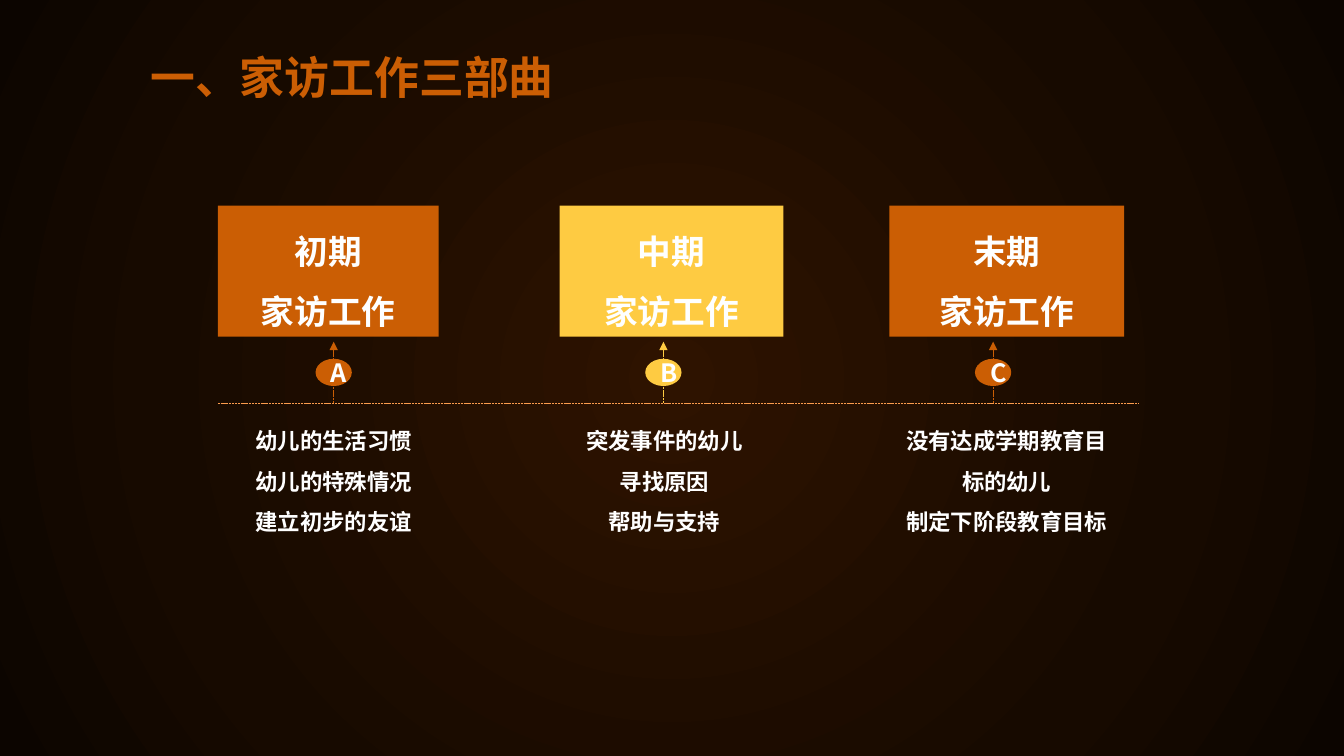
from dataclasses import dataclass

from lxml import etree
from pptx import Presentation
from pptx.dml.color import RGBColor
from pptx.enum.dml import MSO_LINE
from pptx.enum.shapes import MSO_CONNECTOR, MSO_SHAPE
from pptx.enum.text import MSO_ANCHOR, MSO_AUTO_SIZE, PP_ALIGN
from pptx.oxml import parse_xml
from pptx.oxml.ns import nsdecls, qn
from pptx.util import Inches, Pt

RECT = MSO_SHAPE.RECTANGLE
OVAL = MSO_SHAPE.OVAL
LINE = MSO_CONNECTOR.STRAIGHT
DASH = MSO_LINE.SQUARE_DOT
LEFT = PP_ALIGN.LEFT
CENTER = PP_ALIGN.CENTER
TOP = MSO_ANCHOR.TOP
MIDDLE = MSO_ANCHOR.MIDDLE
FIXED = MSO_AUTO_SIZE.NONE

TITLE = "一、家访工作三部曲"
STAGES = [
    {
        "mark": "A",
        "head": ["初期", "家访工作"],
        "notes": ["幼儿的生活习惯", "幼儿的特殊情况", "建立初步的友谊"],
        "box": (2.16, 2.19),
        "text": (2.35, 1.92),
    },
    {
        "mark": "B",
        "head": ["中期", "家访工作"],
        "notes": ["突发事件的幼儿", "寻找原因", "帮助与支持"],
        "box": (5.55, 2.22),
        "text": (5.63, 1.92),
    },
    {
        "mark": "C",
        "head": ["末期", "家访工作"],
        "notes": ["没有达成学期教育目标的幼儿", "制定下阶段教育目标"],
        "box": (8.82, 2.33),
        "text": (8.82, 2.33),
    },
]


@dataclass(frozen=True)
class Theme:
    font: str = "Noto Sans CJK SC"
    orange: str = "CB5E04"
    gold: str = "FECB42"
    axis: str = "FB9C4D"
    pale: str = "FEFFFF"
    white: str = "FFFFFF"
    glow: tuple = ((0, "2E1300"), (67, "170A00"), (100, "0C0500"))
    title: int = 32
    head: int = 24
    mark: int = 18
    note: int = 16


THEME = Theme()
AXIS = 4.0
TIP = 3.39
STEM = 3.31
STEP = 3.27
OVAL_W, OVAL_H = 0.36, 0.27


def paint_back(slide):
    fill = slide.background.fill
    fill.gradient()
    stops = "".join(
        f'<a:gs pos="{pos * 1000}"><a:srgbClr val="{color}"/></a:gs>'
        for pos, color in THEME.glow
    )
    glow = parse_xml(
        f'<a:gradFill {nsdecls("a")} rotWithShape="1"><a:gsLst>{stops}</a:gsLst>'
        '<a:path path="circle"><a:fillToRect l="50000" t="50000" r="50000" b="50000"/>'
        "</a:path></a:gradFill>"
    )
    old = slide.background._cSld.find(".//" + qn("a:gradFill"))
    old.getparent().replace(old, glow)


def write(shape, lines, size, color, space=1.0, align=CENTER, anchor=MIDDLE):
    frame = shape.text_frame
    frame.word_wrap = True
    frame.auto_size = FIXED
    frame.vertical_anchor = anchor
    for num, line in enumerate(lines):
        para = frame.add_paragraph() if num else frame.paragraphs[0]
        para.alignment = align
        para.line_spacing = space
        para.space_before = Pt(0)
        run = para.add_run()
        run.text = line
        font = run.font
        font.name = THEME.font
        font.size = Pt(size)
        font.bold = True
        font.color.rgb = RGBColor.from_string(color)
        face = etree.SubElement(run._r.get_or_add_rPr(), qn("a:ea"))
        face.set("typeface", THEME.font)


def add_block(slide, kind, left, top, width, height, color):
    block = slide.shapes.add_shape(
        kind, Inches(left), Inches(top), Inches(width), Inches(height)
    )
    block.shadow.inherit = False
    block.fill.solid()
    block.fill.fore_color.rgb = RGBColor.from_string(color)
    block.line.fill.background()
    return block


def add_line(slide, start, end, color, arrow=False):
    line = slide.shapes.add_connector(LINE, *map(Inches, start + end))
    line.line.color.rgb = RGBColor.from_string(color)
    line.line.width = Pt(0.5)
    line.line.dash_style = DASH
    if arrow:
        tail = etree.SubElement(line.line._get_or_add_ln(), qn("a:tailEnd"))
        tail.set("type", "triangle")
    etree.SubElement(line._element.spPr, qn("a:effectLst"))


def add_stage(slide, num, stage):
    color = THEME.gold if num % 2 else THEME.orange
    left, width = stage["box"]
    head = add_block(slide, RECT, left, 2.04, width, 1.3, color)
    write(head, stage["head"], THEME.head, THEME.pale, 1.5)

    mid = STEM + num * STEP
    add_line(slide, (mid, AXIS), (mid, TIP), color, True)
    mark = add_block(slide, OVAL, mid - OVAL_W / 2, 3.56, OVAL_W, OVAL_H, color)
    write(mark, [stage["mark"]], THEME.mark, THEME.pale)

    left, width = stage["text"]
    notes = slide.shapes.add_textbox(
        Inches(left), Inches(4.06), Inches(width), Inches(1.49)
    )
    write(notes, stage["notes"], THEME.note, THEME.white, 1.5, anchor=TOP)


def main():
    deck = Presentation()
    deck.slide_width, deck.slide_height = Inches(13.33), Inches(7.5)
    slide = deck.slides.add_slide(deck.slide_layouts[5])
    paint_back(slide)

    title = slide.shapes.title
    title.left, title.top = Inches(1.39), Inches(0.5)
    title.width, title.height = Inches(6.09), Inches(0.61)
    write(title, [TITLE], THEME.title, THEME.orange, 0.9, LEFT, TOP)

    add_line(slide, (2.16, AXIS), (11.29, AXIS), THEME.axis)
    for num, stage in enumerate(STAGES):
        add_stage(slide, num, stage)
    deck.save("out.pptx")


if __name__ == "__main__":
    main()
